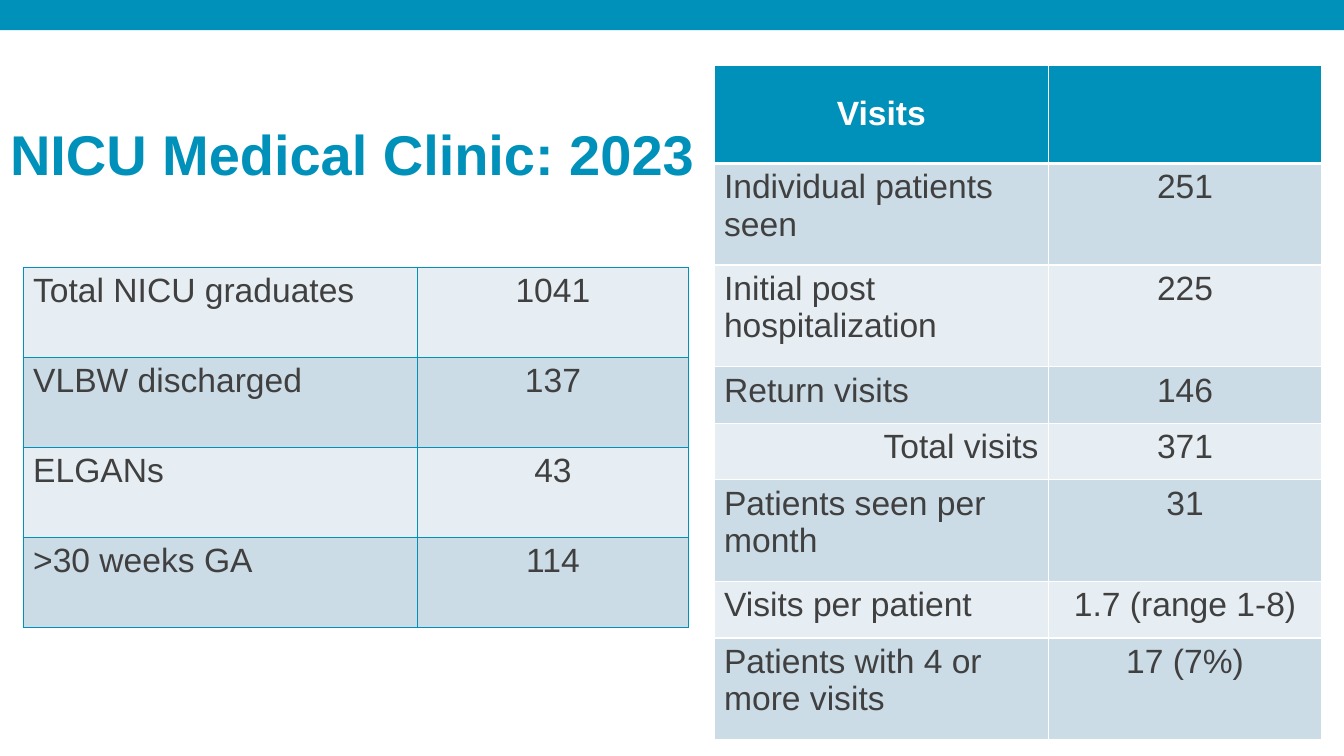
import pptx
import pptx.util
import pptx.dml.color
import pptx.enum.shapes
import pptx.enum.text
import pptx.oxml
import pptx.oxml.ns

Pt = pptx.util.Pt
ALIGN = pptx.enum.text.PP_ALIGN
ANCHOR = pptx.enum.text.MSO_ANCHOR

COLORS = {
    "teal": "0091BA",
    "text": "404040",
    "white": "FFFFFF",
    "light": "E7EEF3",
    "dark": "CCDCE7",
}
FONT = "Arial"
TITLE = "NICU Medical Clinic: 2023"

GRADUATES = {
    "position": (16.5, 191),
    "columns": (281.5, 194),
    "heights": (64.3,) * 4,
    "border": "teal",
    "bands": ("light", "dark"),
    "header": False,
    "rows": [
        ("Total NICU graduates", "1041"),
        ("VLBW discharged", "137"),
        ("ELGANs", "43"),
        (">30 weeks GA", "114"),
    ],
}
VISITS = {
    "position": (510, 46.4),
    "columns": (239, 195),
    "heights": (70.3, 72.6, 72.6, 40.4, 40.4, 72.6, 40.4, 72.6),
    "border": "white",
    "bands": ("light", "dark"),
    "header": True,
    "rows": [
        ("Visits", ""),
        ("Individual patients seen", "251"),
        ("Initial post hospitalization", "225"),
        ("Return visits", "146"),
        ("Total visits", "371"),
        ("Patients seen per month", "31"),
        ("Visits per patient", "1.7 (range 1-8)"),
        ("Patients with 4 or more visits", "17 (7%)"),
    ],
}
RIGHT_ALIGNED = {"Total visits"}


def rgb(name):
    return pptx.dml.color.RGBColor.from_string(COLORS[name])


def format_paragraph(paragraph, size, color, bold, alignment):
    paragraph.alignment = alignment
    for run in paragraph.runs:
        run.font.name = FONT
        run.font.size = Pt(size)
        run.font.bold = bold
        run.font.color.rgb = rgb(color)


def add_border(cell, side, color, width):
    cell._tc.get_or_add_tcPr().append(pptx.oxml.parse_xml(
        f'<a:ln{side} {pptx.oxml.ns.nsdecls("a")} w="{Pt(width)}">'
        f'<a:solidFill><a:srgbClr val="{COLORS[color]}"/></a:solidFill></a:ln{side}>'
    ))


def alignment_for(text, column, is_header):
    if text in RIGHT_ALIGNED:
        return ALIGN.RIGHT
    return ALIGN.CENTER if column or is_header else ALIGN.LEFT


def add_data_table(slide, data):
    rows, columns, heights = data["rows"], data["columns"], data["heights"]
    left, top = data["position"]
    table = slide.shapes.add_table(
        len(rows), len(columns), Pt(left), Pt(top), Pt(sum(columns)), Pt(sum(heights))
    ).table
    table.first_row = data["header"]
    table.horz_banding = False
    for column, width in zip(table.columns, columns):
        column.width = Pt(width)
    for row_index, (values, height) in enumerate(zip(rows, heights)):
        table.rows[row_index].height = Pt(height)
        is_header = data["header"] and row_index == 0
        below_header = data["header"] and row_index == 1
        for column_index, text in enumerate(values):
            cell = table.cell(row_index, column_index)
            widths = {"L": 1, "R": 1, "T": 3 if below_header else 1, "B": 3 if is_header else 1}
            for side, width in widths.items():
                add_border(cell, side, data["border"], width)
            cell.fill.solid()
            cell.fill.fore_color.rgb = rgb("teal" if is_header else data["bands"][row_index % 2])
            cell.vertical_anchor = ANCHOR.MIDDLE if is_header else ANCHOR.TOP
            cell.text_frame.text = text
            format_paragraph(
                cell.text_frame.paragraphs[0], 24, "white" if is_header else "text",
                is_header, alignment_for(text, column_index, is_header),
            )


def main():
    presentation = pptx.Presentation()
    presentation.slide_width, presentation.slide_height = Pt(960), Pt(540)
    slide = presentation.slides.add_slide(presentation.slide_layouts[5])

    banner = slide.shapes.add_shape(
        pptx.enum.shapes.MSO_SHAPE.RECTANGLE, 0, 0, Pt(960), Pt(21.5)
    )
    banner.shadow.inherit = False
    banner.fill.solid()
    banner.fill.fore_color.rgb = rgb("teal")
    banner.line.fill.background()

    title = slide.shapes.title
    title.left, title.top, title.width, title.height = Pt(0), Pt(77), Pt(913), Pt(68.4)
    frame = title.text_frame
    frame.text = TITLE
    frame.word_wrap = True
    frame.auto_size = pptx.enum.text.MSO_AUTO_SIZE.NONE
    frame.vertical_anchor = ANCHOR.MIDDLE
    frame.margin_left = frame.margin_right = frame.margin_bottom = Pt(7.2)
    frame.margin_top = Pt(3.6)
    format_paragraph(frame.paragraphs[0], 40, "teal", True, ALIGN.LEFT)

    for data in (GRADUATES, VISITS):
        add_data_table(slide, data)

    presentation.save("out.pptx")


if __name__ == "__main__":
    main()
